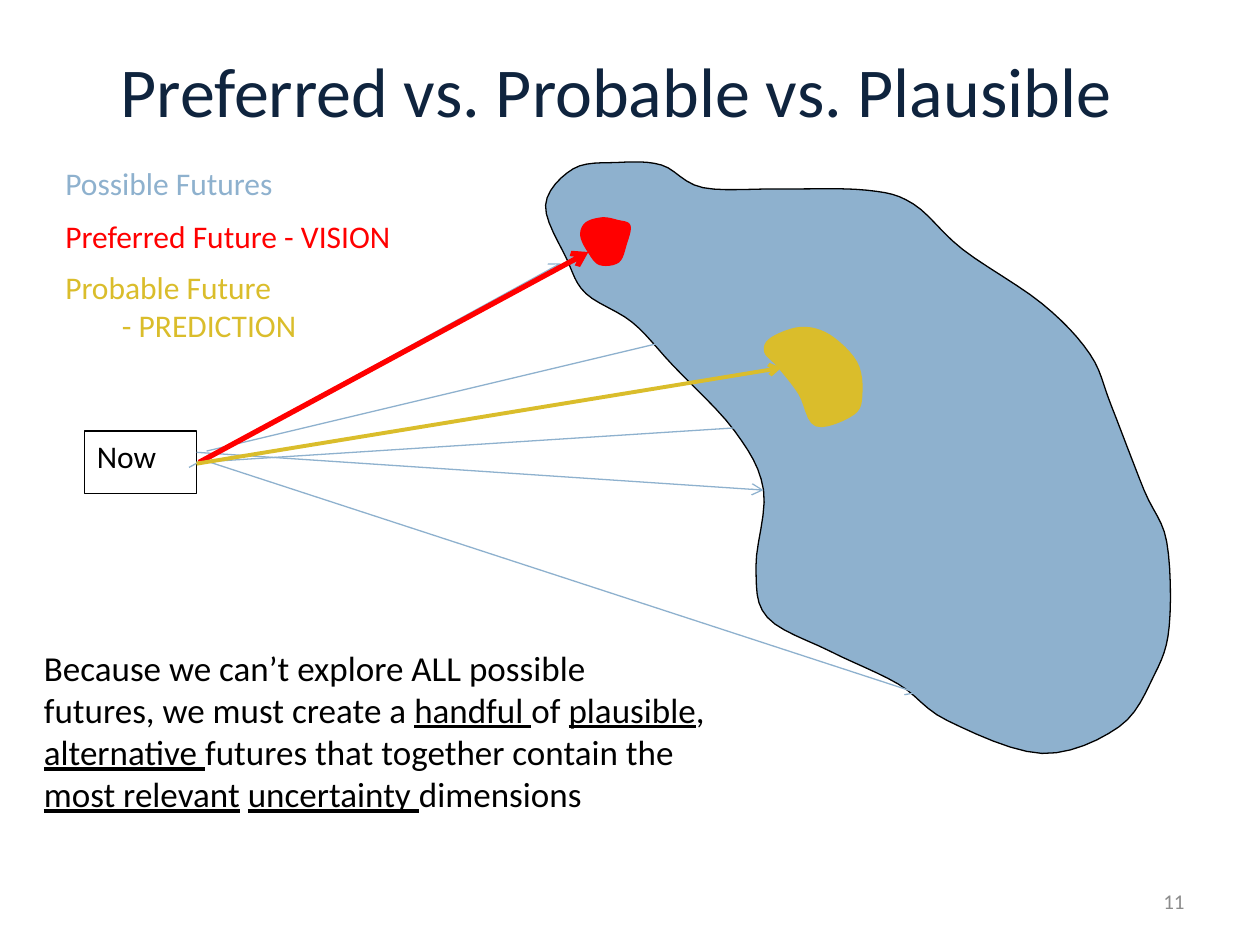
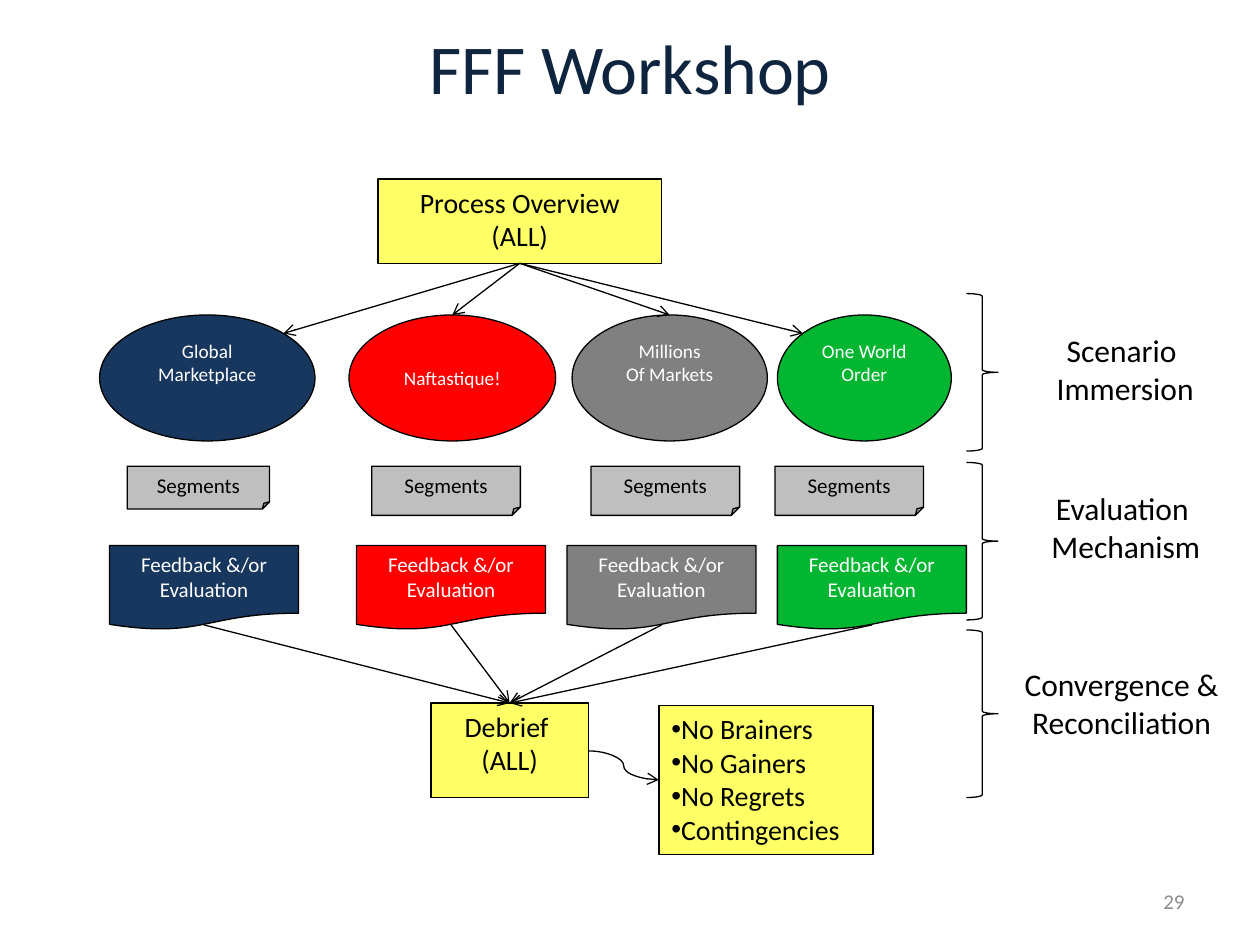
from collections import namedtuple
from math import cos, radians, sin

from lxml import etree
from pptx import Presentation
from pptx.dml.color import RGBColor
from pptx.enum.shapes import MSO_CONNECTOR, MSO_SHAPE
from pptx.enum.text import MSO_ANCHOR, PP_ALIGN
from pptx.oxml.ns import qn
from pptx.util import Inches, Pt

FONT = "Calibri"
COLORS = {
    "title": "0F243E", "black": "000000", "white": "FFFFFF", "number": "8C8C8C",
    "possible": "8EB1CE", "preferred": "FF0000", "probable": "DABD2B",
    "yellow": "FFFF66", "navy": "17375E", "red": "FF0000",
    "gray": "808080", "green": "02B631", "silver": "BFBFBF",
}
THIN = 0.75

POSSIBLE_WEST = [(4.9, 1.29), (4.55, 1.34), (4.33, 1.63), (4.5, 2.06), (4.65, 2.33),
                 (5.02, 2.56), (5.34, 2.9), (5.83, 3.42), (6.06, 3.89), (6, 4.5)]
POSSIBLE_SOUTH = [(6.09, 4.9), (6.59, 5.17), (7.13, 5.43), (7.52, 5.72), (8.27, 5.98),
                  (8.88, 5.77), (9.16, 5.36)]
POSSIBLE_EAST = [(9.28, 4.97), (9.26, 4.3), (9.08, 3.89), (8.82, 3.22), (8.65, 2.81),
                 (8.27, 2.41), (7.64, 1.98), (7.25, 1.62)]
POSSIBLE_NORTH = [(6.88, 1.51), (6.2, 1.5), (5.58, 1.49), (5.25, 1.31)]
PREFERRED_BLOB = [(4.78, 1.73), (4.65, 1.77), (4.61, 1.87), (4.67, 2), (4.76, 2.1),
                  (4.91, 2.08), (4.97, 1.94), (5, 1.79), (4.9, 1.75)]
PROBABLE_BLOB = [(6.18, 2.9), (6.08, 2.79), (6.13, 2.69), (6.36, 2.61), (6.58, 2.67),
                 (6.79, 2.88), (6.83, 3.12), (6.77, 3.28), (6.48, 3.37), (6.35, 3.12)]
POSSIBLE_ARROWS = [
    ((1.5, 3.71), (4.45, 2.09)), ((1.56, 3.67), (6.86, 3.33)), ((1.67, 3.67), (7.28, 5.5)),
    ((1.56, 3.59), (6.06, 3.89)), ((1.64, 3.58), (6.17, 2.5)),
]

OVERVIEW = (3, 1.42, 2.25, 0.67)
DEBRIEF = (3.42, 5.58, 1.25, 0.75)
OUTCOMES = (5.23, 5.6, 1.7, 1.18)
SCENARIO_TOP, SCENARIO_HEIGHT = 2.5, 1
SEGMENTS_TOP = 3.7
FEEDBACK_TOP, FEEDBACK_WIDTH, FEEDBACK_HEIGHT = 4.33, 1.5, 0.67
FEEDBACK_EXIT = 4.96
BRACE_LEFT, BRACE_WIDTH = 7.67, 0.25

Scenario = namedtuple("Scenario", "name color left width entry_angle segments_left "
                      "segments_size feedback_left anchor")
SCENARIOS = [
    Scenario("Global\vMarketplace", "navy", 0.79, 1.71, 45, 1.01, (1.13, 0.34), 0.87,
             MSO_ANCHOR.TOP),
    Scenario("Naftastique!", "red", 2.77, 1.64, 90, 2.95, (1.18, 0.39), 2.83,
             MSO_ANCHOR.MIDDLE),
    Scenario("Millions\nOf Markets", "gray", 4.54, 1.55, 90, 4.69, (1.18, 0.39), 4.5,
             MSO_ANCHOR.TOP),
    Scenario("One World Order", "green", 6.17, 1.38, 135, 6.15, (1.18, 0.39), 6.17,
             MSO_ANCHOR.TOP),
]
Stage = namedtuple("Stage", "name label_box brace_top brace_height")
STAGES = [
    Stage("Scenario \nImmersion", (8.24, 2.58, 1.38, 0.71), 2.33, 1.25),
    Stage("Evaluation \nMechanism", (8.19, 3.83, 1.49, 0.71), 3.67, 1.25),
    Stage("Convergence & \nReconciliation ", (7.96, 5.23, 1.94, 1.01), 5, 1.33),
]


def rgb(color):
    """Return the named colour."""
    return RGBColor.from_string(COLORS[color])


def top_center(box):
    """Return the middle of the top edge of a box."""
    left, top, width, _ = box
    return left + width / 2, top


def bottom_center(box):
    """Return the middle of the bottom edge of a box."""
    left, top, width, height = box
    return left + width / 2, top + height


def ellipse_point(box, angle):
    """Return the point of an ellipse at an angle counted from the right."""
    left, top, width, height = box
    turn = radians(angle)
    return left + width / 2 * (1 + cos(turn)), top + height / 2 * (1 - sin(turn))


def smooth(anchors, steps=6):
    """Return points of a closed Catmull-Rom curve through the anchors."""
    count = len(anchors)
    points = []
    for index in range(count):
        neighbours = [anchors[(index + offset) % count] for offset in (-1, 0, 1, 2)]
        for step in range(steps):
            t = step / steps
            points.append(tuple(
                b + (c - a) * t / 2 + (2 * a - 5 * b + 4 * c - d) * t ** 2 / 2
                + (3 * b - a - 3 * c + d) * t ** 3 / 2
                for a, b, c, d in zip(*neighbours)))
    return points


def format_text(frame, size, color, align=PP_ALIGN.LEFT, anchor=MSO_ANCHOR.TOP):
    """Apply one text style to a whole text frame."""
    frame.vertical_anchor = anchor
    for paragraph in frame.paragraphs:
        paragraph.alignment = align
        for run in paragraph.runs:
            run.font.name = FONT
            run.font.size = Pt(size)
            run.font.color.rgb = rgb(color)


def paint(shape, fill, line="black", width=THIN):
    """Set fill and line of a shape and drop its shadow."""
    shape.shadow.inherit = False
    if fill:
        shape.fill.solid()
        shape.fill.fore_color.rgb = rgb(fill)
    else:
        shape.fill.background()
    shape.line.color.rgb = rgb(line)
    shape.line.width = Pt(width)


def add_label(slide, text, box, size, color, wrap=True, **style):
    """Add a text box in one style."""
    frame = slide.shapes.add_textbox(*map(Inches, box)).text_frame
    frame.word_wrap = wrap
    frame.text = text
    format_text(frame, size, color, **style)
    return frame


def add_box(slide, kind, box, fill, text="", size=16, color="black", align=PP_ALIGN.CENTER,
            anchor=MSO_ANCHOR.TOP):
    """Add a preset shape with a black outline and optional text."""
    shape = slide.shapes.add_shape(kind, *map(Inches, box))
    paint(shape, fill)
    if text:
        shape.text_frame.text = text
        format_text(shape.text_frame, size, color, align, anchor)
    return shape.text_frame


def add_arrow(slide, start, end, color="black", width=THIN, kind=MSO_CONNECTOR.STRAIGHT):
    """Add a connector with an open arrowhead at its end."""
    arrow = slide.shapes.add_connector(kind, *map(Inches, start + end))
    arrow.line.color.rgb = rgb(color)
    arrow.line.width = Pt(width)
    etree.SubElement(arrow.line._get_or_add_ln(), qn("a:tailEnd"), type="arrow")
    etree.SubElement(arrow._element.spPr, qn("a:effectLst"))


def add_region(slide, anchors, fill, line, width=THIN):
    """Add a smooth closed region through the anchors."""
    start, *rest = [(Inches(x), Inches(y)) for x, y in smooth(anchors)]
    builder = slide.shapes.build_freeform(*start)
    builder.add_line_segments(rest, close=True)
    paint(builder.convert_to_shape(), fill, line, width)


def add_bullets(frame):
    """Put a bullet directly before each paragraph."""
    for paragraph in frame.paragraphs:
        properties = paragraph._p.get_or_add_pPr()
        etree.SubElement(properties, qn("a:buFont"), typeface="Arial")
        etree.SubElement(properties, qn("a:buChar"), char="•")


def add_conclusion(slide, lines, box):
    """Add lines of text in which parts between underscores are underlined."""
    frame = add_label(slide, "\n".join(lines), box, 20, "black")
    for paragraph, line in zip(frame.paragraphs, lines):
        paragraph.clear()
        for position, part in enumerate(line.split("_")):
            if part:
                run = paragraph.add_run()
                run.text = part
                run.font.underline = position % 2 == 1
    format_text(frame, 20, "black")


def start_slide(deck, title, title_box, number):
    """Add a slide with its title and slide number."""
    slide = deck.slides.add_slide(deck.slide_layouts[5])
    heading = slide.shapes.title
    heading.left, heading.top, heading.width, heading.height = map(Inches, title_box)
    heading.text_frame.text = title
    format_text(heading.text_frame, 40, "title", PP_ALIGN.CENTER, MSO_ANCHOR.MIDDLE)
    add_label(slide, number, (7.17, 6.95, 2.33, 0.4), 12, "number",
              align=PP_ALIGN.RIGHT, anchor=MSO_ANCHOR.MIDDLE)
    return slide


def build_futures(deck):
    """Build the slide that compares kinds of futures."""
    slide = start_slide(deck, "Preferred vs. Probable vs. Plausible", (0.2, 0.25, 9.38, 0.92), "11")
    add_box(slide, MSO_SHAPE.RECTANGLE, (0.67, 3.42, 0.89, 0.5), None, "Now", 18,
            align=PP_ALIGN.LEFT)
    add_region(slide, POSSIBLE_WEST + POSSIBLE_SOUTH + POSSIBLE_EAST + POSSIBLE_NORTH,
               "possible", "black")
    add_label(slide, "Possible Futures", (0.42, 1.25, 2.71, 0.5), 18, "possible")
    for start, end in POSSIBLE_ARROWS:
        add_arrow(slide, start, end, "possible")
    add_arrow(slide, (1.58, 3.67), (4.67, 2), "preferred", 3)
    add_region(slide, PREFERRED_BLOB, "preferred", "preferred")
    add_label(slide, "Preferred Future - VISION", (0.42, 1.67, 3.52, 0.4), 18, "preferred")
    add_conclusion(slide, [
        "Because we can’t explore ALL possible",
        "futures, we must create a _handful _of _plausible_,",
        "_alternative _futures that together contain the",
        "_most relevant_ _uncertainty _dimensions",
    ], (0.25, 5.08, 6, 1.45))
    probable = add_label(slide, "Probable Future\n- PREDICTION", (0.42, 2.08, 2.73, 0.71),
                         18, "probable")
    probable.paragraphs[1]._p.get_or_add_pPr().set("marL", str(Inches(0.45)))
    add_arrow(slide, (1.56, 3.68), (6.2, 2.92), "probable", 2.25)
    add_region(slide, PROBABLE_BLOB, "probable", "probable", 2.25)


def add_scenario(slide, scenario):
    """Add one scenario column from the overview down to the debrief."""
    ellipse = (scenario.left, SCENARIO_TOP, scenario.width, SCENARIO_HEIGHT)
    segments = (scenario.segments_left, SEGMENTS_TOP, *scenario.segments_size)
    feedback = (scenario.feedback_left, FEEDBACK_TOP, FEEDBACK_WIDTH, FEEDBACK_HEIGHT)
    add_box(slide, MSO_SHAPE.OVAL, ellipse, scenario.color, scenario.name, 11, "white",
            anchor=scenario.anchor)
    add_arrow(slide, bottom_center(OVERVIEW), ellipse_point(ellipse, scenario.entry_angle))
    add_box(slide, MSO_SHAPE.FOLDED_CORNER, segments, "silver", "Segments", 12)
    add_box(slide, MSO_SHAPE.FLOWCHART_DOCUMENT, feedback, scenario.color,
            "Feedback &/or Evaluation", 12, "white")
    add_arrow(slide, (scenario.feedback_left + FEEDBACK_WIDTH / 2, FEEDBACK_EXIT),
              top_center(DEBRIEF))


def add_stage(slide, stage):
    """Add a brace and the name of the stage it spans."""
    brace = (BRACE_LEFT, stage.brace_top, BRACE_WIDTH, stage.brace_height)
    add_box(slide, MSO_SHAPE.RIGHT_BRACE, brace, None)
    add_label(slide, stage.name, stage.label_box, 18, "black", wrap=False,
              align=PP_ALIGN.CENTER)


def build_workshop(deck):
    """Build the slide with the workshop flow."""
    slide = start_slide(deck, "FFF Workshop", (0.5, 0.19, 9, 0.67), "29")
    add_box(slide, MSO_SHAPE.RECTANGLE, OVERVIEW, "yellow", "Process Overview (ALL)")
    add_box(slide, MSO_SHAPE.RECTANGLE, DEBRIEF, "yellow", "Debrief \n(ALL)")
    for scenario in SCENARIOS:
        add_scenario(slide, scenario)
    outcomes = add_box(slide, MSO_SHAPE.RECTANGLE, OUTCOMES, "yellow",
                       "No Brainers\nNo Gainers\nNo Regrets\nContingencies",
                       align=PP_ALIGN.LEFT)
    add_bullets(outcomes)
    add_arrow(slide, (4.67, 5.96), (5.23, 6.19), kind=MSO_CONNECTOR.CURVE)
    for stage in STAGES:
        add_stage(slide, stage)


def main():
    """Build and save the deck."""
    deck = Presentation()
    deck.slide_width, deck.slide_height = Inches(10), Inches(7.5)
    build_futures(deck)
    build_workshop(deck)
    deck.save("out.pptx")


if __name__ == "__main__":
    main()
